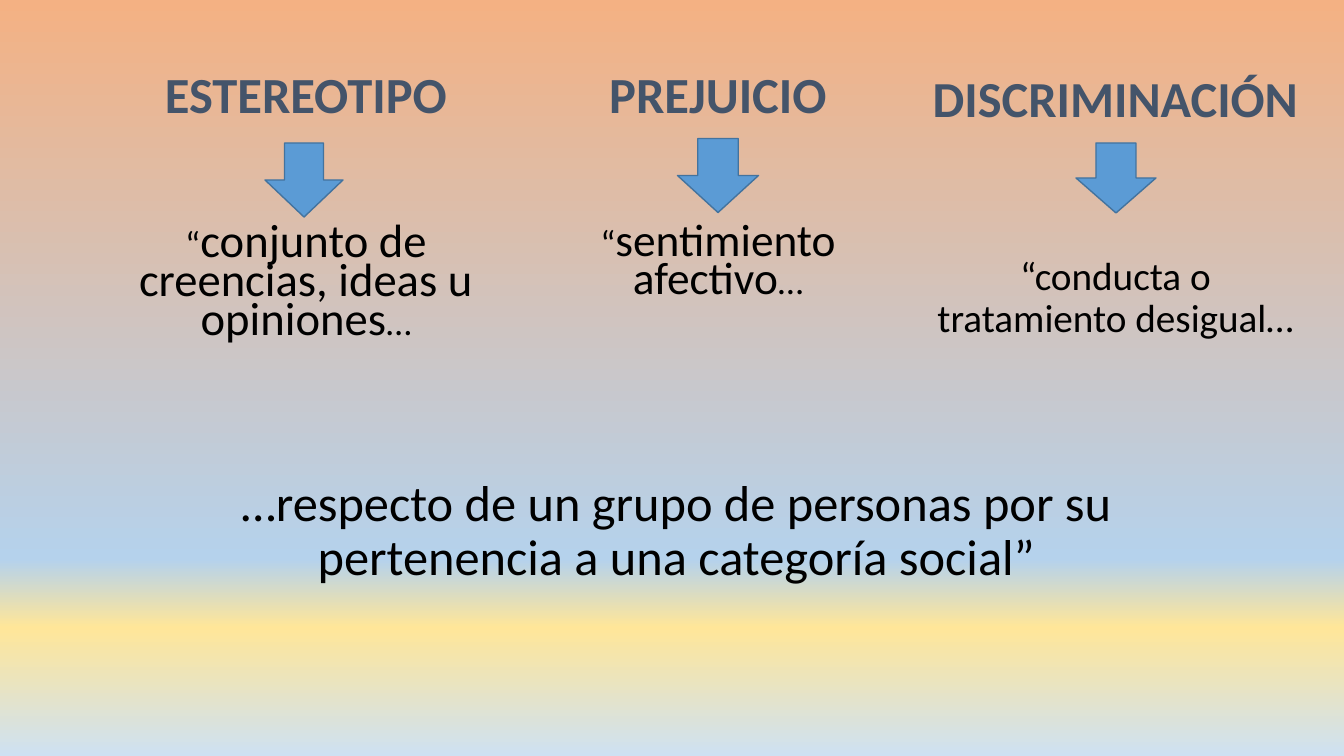
from dataclasses import dataclass

from lxml.etree import SubElement
from pptx import Presentation
from pptx.dml.color import RGBColor
from pptx.enum.shapes import MSO_SHAPE as Preset
from pptx.enum.text import PP_ALIGN as Align
from pptx.oxml.ns import qn
from pptx.slide import Slide
from pptx.util import Emu, Pt

EMU_PER_PX = 914400 / 100.8
FONT = "Calibri"
SLATE = RGBColor(0x44, 0x54, 0x6A)
BLACK = RGBColor(0x00, 0x00, 0x00)
ARROW_FILL = RGBColor(0x5B, 0x9B, 0xD5)
ARROW_LINE = RGBColor(0x43, 0x73, 0x9E)
# Background stops from top to bottom: percent, colour
SKY = (
    (0, RGBColor(0xF4, 0xB1, 0x83)),
    (74, RGBColor(0xB5, 0xD2, 0xEC)),
    (83, RGBColor(0xFF, 0xE6, 0x99)),
    (100, RGBColor(0xCE, 0xE1, 0xF2)),
)


@dataclass(frozen=True)
class Box:
    left: int
    top: int
    width: int
    height: int


@dataclass(frozen=True)
class Phrase:
    text: str
    size: float
    color: RGBColor = BLACK
    bold: bool = False


@dataclass(frozen=True)
class Line:
    phrases: tuple[Phrase, ...]
    space_before: float = 10


@dataclass(frozen=True)
class Concept:
    box: Box
    arrow: Box
    title: Phrase
    definition: tuple[Phrase, ...]
    gap: float
    line_spacing: float


CONCEPTS = (
    Concept(
        Box(93, 75, 426, 296), Box(267, 141, 74, 78),
        Phrase("ESTEREOTIPO", 36.1, SLATE, True),
        (Phrase("“", 25.9),
         Phrase("conjunto de creencias, ideas u opiniones", 33.3),
         Phrase("…", 25.9)),
        gap=74, line_spacing=0.7,
    ),
    Concept(
        Box(519, 75, 398, 308), Box(681, 135, 74, 81),
        Phrase("PREJUICIO", 36.1, SLATE, True),
        (Phrase("“", 25.9),
         Phrase("sentimiento afectivo", 32.4),
         Phrase("…", 25.9)),
        gap=74, line_spacing=0.7,
    ),
    Concept(
        Box(916, 69, 399, 281), Box(1081, 138, 70, 80),
        Phrase("DISCRIMINACIÓN", 36, SLATE, True),
        (Phrase("“conducta o tratamiento desigual…", 28),),
        gap=91.5, line_spacing=0.9,
    ),
)
CONCLUSION_BOX = Box(144, 473, 1065, 222)
CONCLUSION = Phrase(
    "…respecto de un grupo de personas por su pertenencia a una categoría social”", 36)


def px(value: int) -> Emu:
    return Emu(round(value * EMU_PER_PX))


def place(box: Box) -> tuple[Emu, Emu, Emu, Emu]:
    return px(box.left), px(box.top), px(box.width), px(box.height)


def paint_background(slide: Slide) -> None:
    slide.background.fill.gradient()
    gradient = slide.element.find(".//" + qn("a:gradFill"))
    for child in list(gradient):
        gradient.remove(child)
    stops = SubElement(gradient, qn("a:gsLst"))
    for percent, color in SKY:
        stop = SubElement(stops, qn("a:gs"), pos=str(percent * 1000))
        SubElement(stop, qn("a:srgbClr"), val=str(color))
    SubElement(gradient, qn("a:lin"), ang="5400000", scaled="0")


def add_text(slide: Slide, box: Box, lines: tuple[Line, ...], line_spacing: float) -> None:
    text_frame = slide.shapes.add_textbox(*place(box)).text_frame
    text_frame.word_wrap = True
    for index, line in enumerate(lines):
        paragraph = text_frame.add_paragraph() if index else text_frame.paragraphs[0]
        paragraph.alignment = Align.CENTER
        paragraph.line_spacing = line_spacing
        paragraph.space_before = Pt(line.space_before)
        for phrase in line.phrases:
            run = paragraph.add_run()
            run.text = phrase.text
            run.font.name = FONT
            run.font.size = Pt(phrase.size)
            run.font.bold = phrase.bold
            run.font.color.rgb = phrase.color


def add_arrow(slide: Slide, box: Box) -> None:
    shape = slide.shapes.add_shape(Preset.RIGHT_ARROW, *place(box))
    shape.rotation = 90
    shape.shadow.inherit = False
    shape.fill.solid()
    shape.fill.fore_color.rgb = ARROW_FILL
    shape.line.color.rgb = ARROW_LINE
    shape.line.width = Pt(1)


def main() -> None:
    presentation = Presentation()
    presentation.slide_width = px(1344)
    presentation.slide_height = px(756)
    slide = presentation.slides.add_slide(presentation.slide_layouts[6])
    paint_background(slide)

    # Three concepts, each with an arrow down to its definition
    for concept in CONCEPTS:
        lines = (Line((concept.title,)), Line(concept.definition, concept.gap))
        add_text(slide, concept.box, lines, concept.line_spacing)
        add_arrow(slide, concept.arrow)

    # Shared ending of the three definitions
    add_text(slide, CONCLUSION_BOX, (Line((CONCLUSION,)),), 0.9)

    presentation.save("out.pptx")


if __name__ == "__main__":
    main()
